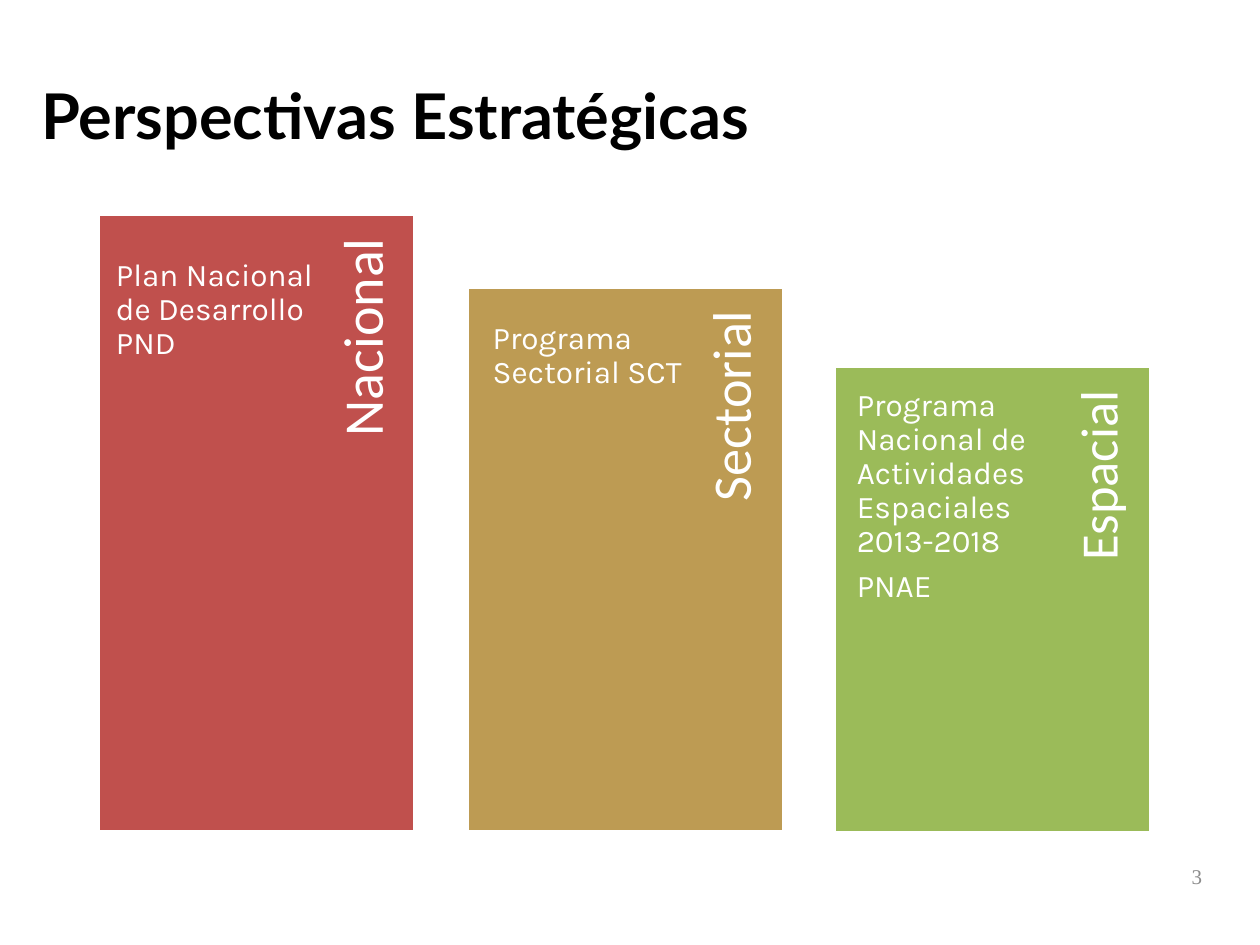
from pptx import Presentation
from pptx.dml.color import RGBColor
from pptx.enum.shapes import MSO_SHAPE
from pptx.enum.text import MSO_ANCHOR, PP_ALIGN
from pptx.util import Pt

PX = 9144
WHITE = RGBColor(0xFF, 0xFF, 0xFF)
BLACK = RGBColor(0x00, 0x00, 0x00)
GRAY = RGBColor(0x8C, 0x8C, 0x8C)
RED = RGBColor(0xC0, 0x50, 0x4D)
GOLD = RGBColor(0xBD, 0x9B, 0x53)
GREEN = RGBColor(0x9B, 0xBB, 0x59)

BAR_WIDTH = 251
LABEL_HEIGHT = 65
LABEL_CENTER = 213


def emu(*lengths):
    return [length * PX for length in lengths]


def apply(target, values):
    for name, value in values.items():
        setattr(target, name, value)


class SlideBuilder:
    title_font = {"name": "Lato", "size": Pt(36), "bold": True}
    body_font = {"name": "Karla", "size": Pt(18)}
    number_font = {"name": "Times New Roman", "size": Pt(12)}
    spaced = {"line_spacing": 0.9, "space_after": Pt(6.3)}

    def __init__(self, prs):
        self.s = prs.slides.add_slide(prs.slide_layouts[6])

    def text(self, box, lines, font, color, para=None, insets=(10, 5, 10, 5),
             anchor=MSO_ANCHOR.MIDDLE, rotation=0):
        sp = self.s.shapes.add_textbox(*emu(*box))
        sp.rotation = rotation
        tf = sp.text_frame
        sides = ("margin_left", "margin_top", "margin_right", "margin_bottom")
        apply(tf, {"word_wrap": True, "vertical_anchor": anchor,
                   **dict(zip(sides, emu(*insets)))})
        for i, line in enumerate(lines):
            p = tf.add_paragraph() if i else tf.paragraphs[0]
            apply(p, para or {})
            r = p.add_run()
            r.text = line
            apply(r.font, font)
            r.font.color.rgb = color

    def title(self, text):
        self.text((23, 28, 900, 125), [text], self.title_font, BLACK)

    def bar(self, left, top, height, color):
        sp = self.s.shapes.add_shape(
            MSO_SHAPE.RECTANGLE, *emu(left, top, BAR_WIDTH, height))
        sp.shadow.inherit = False
        sp.fill.solid()
        sp.fill.fore_color.rgb = color
        sp.line.color.rgb = WHITE
        sp.line.width = Pt(2)

    def label(self, left, top, height, text, size):
        length = height * 9 // 10
        box = (left + LABEL_CENTER - length // 2,
               top + (length - LABEL_HEIGHT) // 2, length, LABEL_HEIGHT)
        self.text(box, [text], {"name": "Calibri", "size": Pt(size)}, WHITE,
                  {**self.spaced, "alignment": PP_ALIGN.RIGHT},
                  (13, 0, 19, 4), rotation=270)

    def body(self, box, lines):
        self.text(box, lines, self.body_font, WHITE, self.spaced,
                  (7, 7, 7, 7), MSO_ANCHOR.TOP)

    def number(self, text):
        self.text((731, 675, 233, 40), [text], self.number_font, GRAY,
                  {"alignment": PP_ALIGN.RIGHT})


def main():
    prs = Presentation()
    prs.slide_width, prs.slide_height = emu(1000, 750)
    slide = SlideBuilder(prs)
    slide.title("Perspectivas Estratégicas")
    perspectives = [
        (662, 291, 370, GREEN, "Espacial", 30, (673, 302, 173, 347),
         ["Programa Nacional de Actividades Espaciales 2013-2018", "PNAE"]),
        (371, 228, 432, GOLD, "Sectorial", 31, (384, 249, 170, 391),
         ["Programa Sectorial SCT"]),
        (78, 170, 490, RED, "Nacional", 32, (85, 199, 181, 434),
         ["Plan Nacional de Desarrollo PND"]),
    ]
    for left, top, height, color, name, size, box, lines in perspectives:
        slide.bar(left, top, height, color)
        slide.label(left, top, height, name, size)
        slide.body(box, lines)
    slide.number("3")
    prs.save("out.pptx")


if __name__ == "__main__":
    main()
